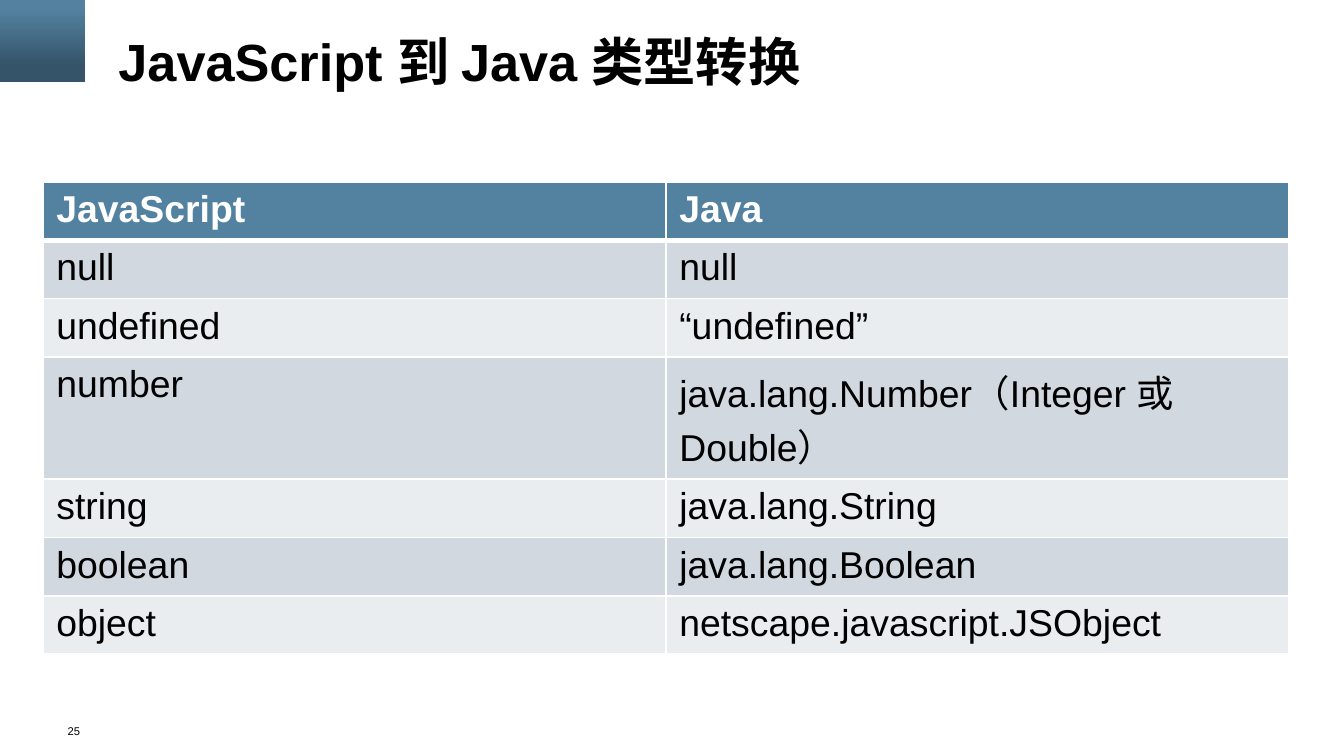
from lxml.etree import SubElement
from pptx import Presentation
from pptx.dml.color import RGBColor
from pptx.enum.shapes import MSO_SHAPE
from pptx.enum.text import MSO_ANCHOR, PP_ALIGN
from pptx.oxml.ns import qn
from pptx.util import Pt

BLACK = RGBColor(0x00, 0x00, 0x00)
WHITE = RGBColor(0xFF, 0xFF, 0xFF)
BLUE = RGBColor(0x53, 0x82, 0xA1)
NAVY = RGBColor(0x35, 0x54, 0x69)
BAND_DARK = RGBColor(0xD1, 0xD8, 0xE0)
BAND_LIGHT = RGBColor(0xE9, 0xED, 0xF0)
FONT = "Arial"
CJK_FONT = "Noto Sans CJK SC"

ROWS = [
    ("JavaScript", "Java"),
    ("null", "null"),
    ("undefined", "“undefined”"),
    ("number", "java.lang.Number（Integer 或 Double）"),
    ("string", "java.lang.String"),
    ("boolean", "java.lang.Boolean"),
    ("object", "netscape.javascript.JSObject"),
]


def write(tf, text, size=20, color=BLACK, bold=False, align=PP_ALIGN.LEFT, spacing=None):
    p = tf.paragraphs[0]
    p.alignment = align
    p.line_spacing = spacing
    r = p.add_run()
    r.text = text
    r.font.name = FONT
    r.font.size = Pt(size)
    r.font.bold = bold
    r.font.color.rgb = color
    SubElement(r.font._element, qn("a:ea"), typeface=CJK_FONT)


def set_border(cell, side, width):
    ln = SubElement(cell._tc.get_or_add_tcPr(), qn(f"a:{side}"), w=str(Pt(width)))
    fill = SubElement(ln, qn("a:solidFill"))
    SubElement(fill, qn("a:srgbClr"), val=str(WHITE))


def add_corner(s, x, y, w, h):
    sp = s.shapes.add_shape(MSO_SHAPE.RECTANGLE, Pt(x), Pt(y), Pt(w), Pt(h))
    sp.shadow.inherit = False
    sp.line.fill.background()
    sp.fill.gradient()
    sp.fill.gradient_angle = 90
    for stop, color, position in zip(sp.fill.gradient_stops, (NAVY, BLUE), (0.2, 0.9)):
        stop.color.rgb = color
        stop.position = position


def add_title(s, x, y, w, h):
    tf = s.shapes.add_textbox(Pt(x), Pt(y), Pt(w), Pt(h)).text_frame
    tf.word_wrap = True
    tf.vertical_anchor = MSO_ANCHOR.MIDDLE
    tf.margin_left = tf.margin_top = tf.margin_right = tf.margin_bottom = 0
    write(tf, "JavaScript 到 Java 类型转换", size=28, bold=True, spacing=0.9)


def add_type_table(s, x, y, w, row_h, wrapped_h):
    heights = [wrapped_h if label == "number" else row_h for label, _ in ROWS]
    table = s.shapes.add_table(
        len(ROWS), 2, Pt(x), Pt(y), Pt(w), Pt(sum(heights))
    ).table
    for i, (texts, height) in enumerate(zip(ROWS, heights)):
        table.rows[i].height = Pt(height)
        header = i == 0
        fill = BLUE if header else BAND_DARK if i % 2 else BAND_LIGHT
        for j, text in enumerate(texts):
            cell = table.cell(i, j)
            for side in ("lnL", "lnR", "lnT", "lnB"):
                thick = (i, side) in ((0, "lnB"), (1, "lnT"))
                set_border(cell, side, 3 if thick else 1)
            cell.fill.solid()
            cell.fill.fore_color.rgb = fill
            write(cell.text_frame, text, color=WHITE if header else BLACK, bold=header)


def add_page_number(s, x, y, w, h):
    tf = s.shapes.add_textbox(Pt(x), Pt(y), Pt(w), Pt(h)).text_frame
    tf.word_wrap = False
    write(tf, "25", size=6, align=PP_ALIGN.RIGHT)


def main():
    prs = Presentation()
    prs.slide_width, prs.slide_height = Pt(720), Pt(405)
    s = prs.slides.add_slide(prs.slide_layouts[6])
    add_page_number(s, 28, 384.5, 22, 14.5)
    add_corner(s, 0, 0, 45.5, 44)
    add_title(s, 63.5, 19, 648, 31.5)
    add_type_table(s, 23, 97.5, 667.5, 29.5, 65.5)
    prs.save("out.pptx")


if __name__ == "__main__":
    main()
